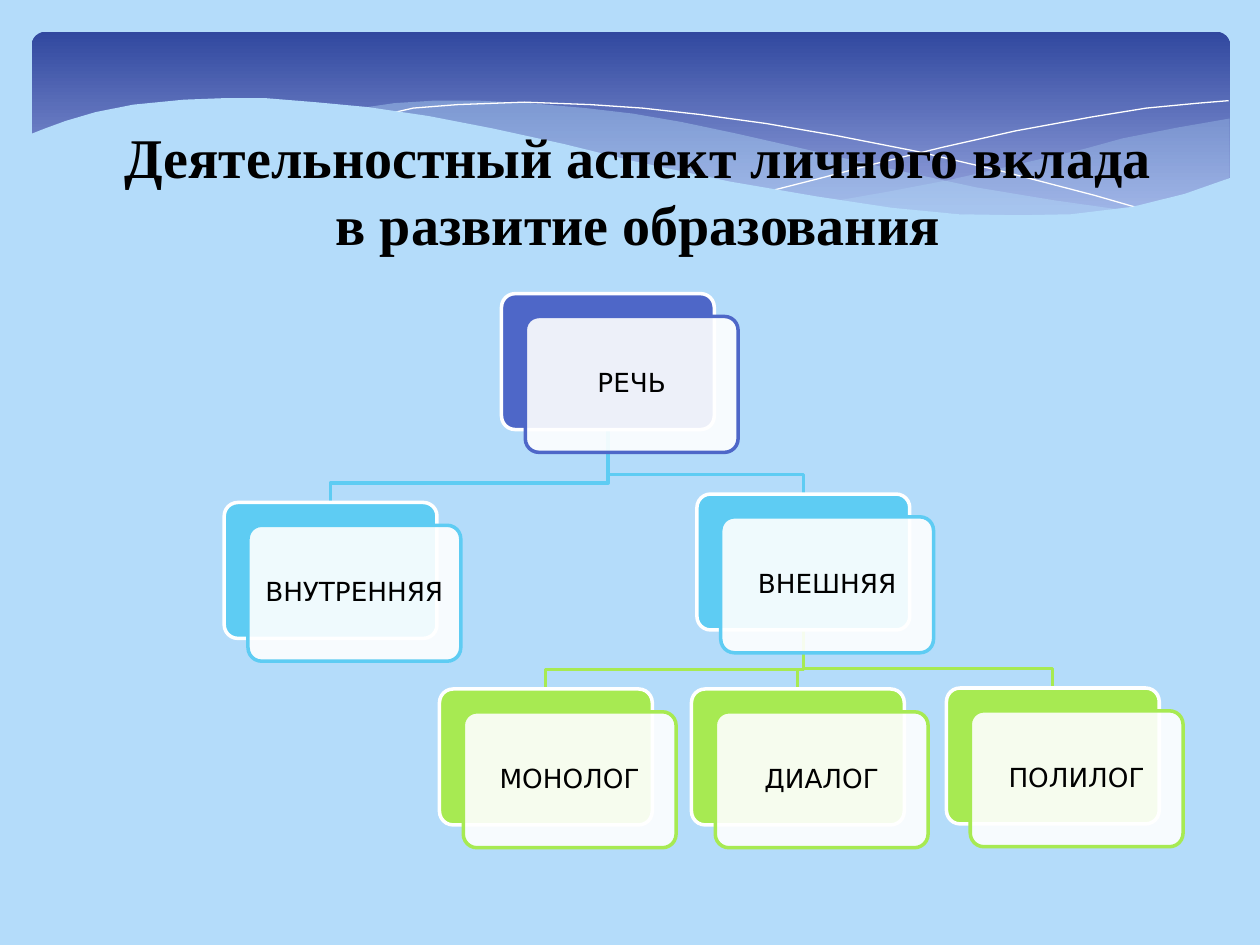
"""Build a slide with a wave banner, a title and a tree of kinds of speech."""
from dataclasses import dataclass

import pptx
import pptx.dml.color
import pptx.enum.dml
import pptx.enum.shapes
import pptx.enum.text
import pptx.oxml
import pptx.oxml.ns
import pptx.util

Cm = pptx.util.Cm
Pt = pptx.util.Pt


@dataclass(frozen=True)
class Theme:
    sky: str = "B4DCFA"
    white: str = "FFFFFF"
    black: str = "000000"
    dark: str = "31489F"
    pale: str = "95A4DE"
    root: str = "4E67C8"
    mid: str = "5ECCF3"
    leaf: str = "A7EA52"
    head: str = "Times New Roman"
    body: str = "DejaVu Sans"
    big: int = 32
    small: int = 15


theme = Theme()
deck = pptx.Presentation()
deck.slide_width, deck.slide_height = Cm(25.4), Cm(19.05)
slide = deck.slides.add_slide(deck.slide_layouts[6])
slide.background.fill.solid()
slide.background.fill.fore_color.rgb = pptx.dml.color.RGBColor.from_string(theme.sky)
rgb = pptx.dml.color.RGBColor.from_string


def paint(shape, fill=None, alpha=100, line=None, width=2):
    """Set fill, opacity in percent and outline."""
    shape.shadow.inherit = False
    if fill:
        shape.fill.solid()
        shape.fill.fore_color.rgb = rgb(fill)
        if alpha < 100:
            tint = shape.fill._xPr.find(".//" + pptx.oxml.ns.qn("a:srgbClr"))
            node = pptx.oxml.parse_xml(
                f'<a:alpha {pptx.oxml.ns.nsdecls("a")} val="{alpha * 1000}"/>')
            tint.append(node)
    else:
        shape.fill.background()
    if line:
        shape.line.color.rgb = rgb(line)
        shape.line.width = Pt(width)
    else:
        shape.line.fill.background()


def trace(dots, close=False):
    """Draw a path through points given in centimetres."""
    grid = [(round(x * 100), round(y * 100)) for x, y in dots]
    pen = slide.shapes.build_freeform(*grid[0], scale=Cm(0.01))
    pen.add_line_segments(grid[1:], close=close)
    return pen.convert_to_shape()


round_box = pptx.enum.shapes.MSO_SHAPE.ROUNDED_RECTANGLE
band = slide.shapes.add_shape(round_box, Cm(0.64), Cm(0.64), Cm(24.16), Cm(3.96))
band.adjustments[0] = 0.07
paint(band)
band.fill.gradient()
band.fill.gradient_angle = 270
for stop, (tone, spot) in zip(band.fill.gradient_stops, [(theme.dark, 0), (theme.pale, 0.9)]):
    stop.color.rgb = rgb(tone)
    stop.position = spot

right = [(24.79, 2.39), (23.75, 2.57), (22.63, 2.79), (21.87, 3), (20.45, 3.33),
         (19.13, 3.63), (17.93, 3.86), (16.79, 4.06), (17.91, 4.19), (18.92, 4.29),
         (20.12, 4.37), (21.21, 4.37), (22.15, 4.29), (22.99, 4.14), (23.75, 3.96),
         (24.46, 3.73), (24.79, 3.58)]
broad = [(22.68, 4.24), (21.26, 4.04), (19.69, 3.78), (17.93, 3.4), (15.98, 2.95),
         (14.83, 2.69), (13.74, 2.46), (12.75, 2.29), (11.81, 2.18), (10.67, 2.08),
         (9.65, 2.03), (8.74, 2.03), (7.95, 2.08), (7.26, 2.18), (8.2, 2.29),
         (9.19, 2.46), (10.26, 2.69), (11.4, 2.95), (13.46, 3.43), (14.83, 3.71),
         (16.1, 3.96), (17.27, 4.14), (18.34, 4.27), (19.33, 4.34), (20.5, 4.39),
         (21.54, 4.37)]
fall = [(7.85, 2.29), (8.33, 2.18), (9.22, 2.11), (10.57, 2.06), (11.91, 2.11),
        (12.95, 2.18), (14.12, 2.31), (15.44, 2.49), (16.89, 2.74), (18.47, 3.05),
        (20.19, 3.45), (22.07, 3.94), (23.04, 4.22)]
rise = [(15.57, 3.84), (16.59, 3.58), (17.65, 3.3), (19, 2.97), (20.47, 2.64),
        (22, 2.36), (23.11, 2.18), (24.16, 2.08), (24.77, 2.03)]
front = [(24.82, 3.58), (23.88, 3.91), (22.83, 4.17), (21.59, 4.32), (20.55, 4.34),
         (19.33, 4.32), (17.98, 4.19), (16.46, 3.96), (14.71, 3.66), (12.78, 3.25),
         (11.35, 2.9), (9.93, 2.59), (8.64, 2.34), (7.42, 2.16), (6.35, 2.06),
         (5.36, 1.98), (4.5, 1.98), (3.71, 2.01), (2.69, 2.11), (1.93, 2.26),
         (1.32, 2.44), (0.91, 2.59), (0.58, 2.72), (0.58, 5.69), (24.82, 5.69)]
paint(trace(right, True), theme.sky, 29)
paint(trace(broad, True), theme.sky, 40)
for curve in (fall, rise):
    paint(trace(curve), line=theme.white, width=0)
paint(trace(front, True), theme.sky)

title = slide.shapes.add_textbox(Cm(2.11), Cm(2.34), Cm(21.79), Cm(3.84))
title.text_frame.word_wrap = True
title.text_frame.text = "Деятельностный аспект личного вклада \vв развитие образования "
para = title.text_frame.paragraphs[0]
para.alignment = pptx.enum.text.PP_ALIGN.CENTER
for run in para.runs:
    run.font.name, run.font.size, run.font.bold = theme.head, Pt(theme.big), True
    run.font.color.rgb = rgb(theme.black)

wide, high, shift, drop, bend = 4.29, 2.74, 0.48, 0.46, 0.39
nodes = {
    "РЕЧЬ": (10.11, 5.92, theme.root, None),
    "ВНУТРЕННЯЯ": (4.52, 10.13, theme.mid, "РЕЧЬ"),
    "ВНЕШНЯЯ": (14.05, 9.96, theme.mid, "РЕЧЬ"),
    "МОНОЛОГ": (8.86, 13.89, theme.leaf, "ВНЕШНЯЯ"),
    "ДИАЛОГ": (13.94, 13.89, theme.leaf, "ВНЕШНЯЯ"),
    "ПОЛИЛОГ": (19.08, 13.87, theme.leaf, "ВНЕШНЯЯ"),
}

for x, y, tone, above in reversed(nodes.values()):
    if above:
        left, top = nodes[above][:2]
        start, end = left + wide / 2, x + wide / 2
        link = trace([(start, top + high), (start, y - bend), (end, y - bend), (end, y)])
        paint(link, line=tone)

for label, (x, y, tone, above) in nodes.items():
    back = slide.shapes.add_shape(round_box, Cm(x), Cm(y), Cm(wide), Cm(high))
    paint(back, tone, line=theme.white)
    card = slide.shapes.add_shape(round_box, Cm(x + shift), Cm(y + drop), Cm(wide), Cm(high))
    paint(card, theme.white, 90, tone)
    back.adjustments[0] = card.adjustments[0] = 0.1
    frame = card.text_frame
    frame.word_wrap = True
    frame.vertical_anchor = pptx.enum.text.MSO_ANCHOR.MIDDLE
    frame.margin_left = frame.margin_right = Cm(0.05)
    frame.margin_top = frame.margin_bottom = Cm(0.05)
    frame.text = label
    para = frame.paragraphs[0]
    para.alignment = pptx.enum.text.PP_ALIGN.CENTER
    para.line_spacing = 0.9
    font = para.runs[0].font
    font.name, font.size = theme.body, Pt(theme.small)
    font.color.rgb = rgb(theme.black)

deck.save("out.pptx")
